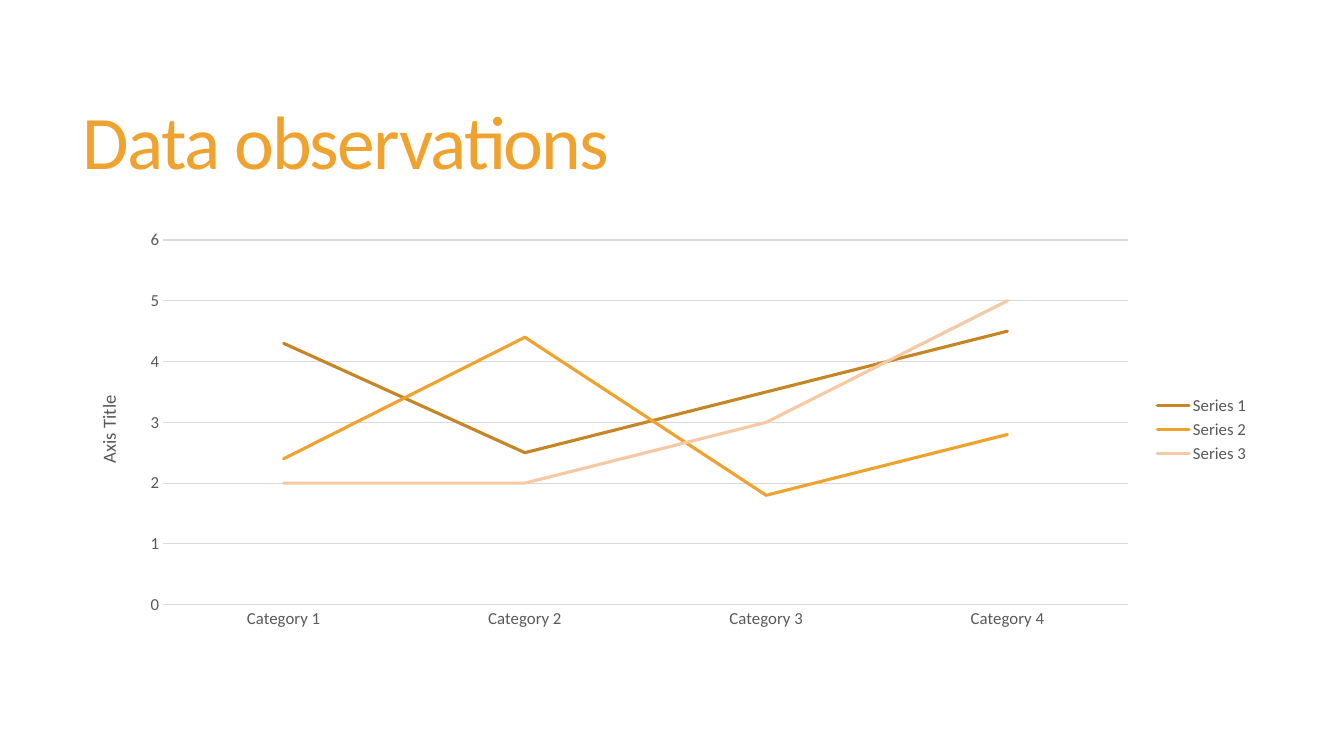
from pptx import Presentation
from pptx.chart.data import CategoryChartData
from pptx.dml.color import RGBColor
from pptx.enum.chart import XL_CHART_TYPE, XL_LEGEND_POSITION, XL_MARKER_STYLE, XL_TICK_MARK
from pptx.enum.text import MSO_ANCHOR
from pptx.util import Pt

FONT = "Calibri"
ORANGE, GREY, RULE = "F0A22E", "595959", "D9D9D9"
CATEGORIES = [f"Category {n}" for n in range(1, 5)]
SERIES = [
    ("Series 1", (4.3, 2.5, 3.5, 4.5), "C78626"),
    ("Series 2", (2.4, 4.4, 1.8, 2.8), ORANGE),
    ("Series 3", (2, 2, 3, 5), "F5C9A4"),
]


def rgb(value):
    """Return the colour for a hex string."""
    return RGBColor.from_string(value)


def set_font(font, size, color):
    """Apply the slide's typeface with a size and colour."""
    font.name, font.size, font.bold = FONT, Pt(size), False
    font.color.rgb = rgb(color)


def set_line(line, color, width):
    """Give a line its colour and width."""
    line.color.rgb = rgb(color)
    line.width = Pt(width)


def add_title(slide, text, x, y, w, h):
    """Place the slide title, centred vertically in its box."""
    tf = slide.shapes.add_textbox(Pt(x), Pt(y), Pt(w), Pt(h)).text_frame
    tf.word_wrap = True
    tf.vertical_anchor = MSO_ANCHOR.MIDDLE
    p = tf.paragraphs[0]
    p.line_spacing = 0.85
    r = p.add_run()
    r.text = text
    set_font(r.font, 54, ORANGE)
    r.font._element.set("spc", "-120")


def style_axes(chart):
    """Style both axes, the gridlines and the value axis title."""
    for axis in (chart.category_axis, chart.value_axis):
        axis.major_tick_mark = axis.minor_tick_mark = XL_TICK_MARK.NONE
        set_font(axis.tick_labels.font, 12, GREY)
    set_line(chart.category_axis.format.line, RULE, 0.75)
    axis = chart.value_axis
    axis.minimum_scale, axis.maximum_scale, axis.major_unit = 0, 6, 1
    axis.format.line.fill.background()
    axis.has_major_gridlines = True
    set_line(axis.major_gridlines.format.line, RULE, 0.75)
    r = axis.axis_title.text_frame.paragraphs[0].add_run()
    r.text = "Axis Title"
    set_font(r.font, 13.3, GREY)


def add_line_chart(slide, x, y, w, h):
    """Place the line chart with its legend on the right."""
    data = CategoryChartData()
    data.categories = CATEGORIES
    for name, values, _ in SERIES:
        data.add_series(name, values)
    chart = slide.shapes.add_chart(
        XL_CHART_TYPE.LINE, Pt(x), Pt(y), Pt(w), Pt(h), data).chart
    chart.has_title = False
    set_font(chart.font, 12, GREY)
    style_axes(chart)
    chart.has_legend = True
    chart.legend.position = XL_LEGEND_POSITION.RIGHT
    chart.legend.include_in_layout = False
    set_font(chart.legend.font, 12, GREY)
    plot = chart.plots[0]
    plot.vary_by_categories = False
    for series, (_, _, color) in zip(plot.series, SERIES):
        series.smooth = False
        series.marker.style = XL_MARKER_STYLE.NONE
        set_line(series.format.line, color, 2.25)
        series.format.line._ln.set("cap", "rnd")


def main():
    """Build the slide and save it."""
    prs = Presentation()
    prs.slide_width, prs.slide_height = Pt(960), Pt(540)
    slide = prs.slides.add_slide(prs.slide_layouts[6])
    add_title(slide, "Data observations", 52, 39.6, 848, 130.4)
    add_line_chart(slide, 53.3, 158.4, 846.7, 296.6)
    prs.save("out.pptx")


if __name__ == "__main__":
    main()
